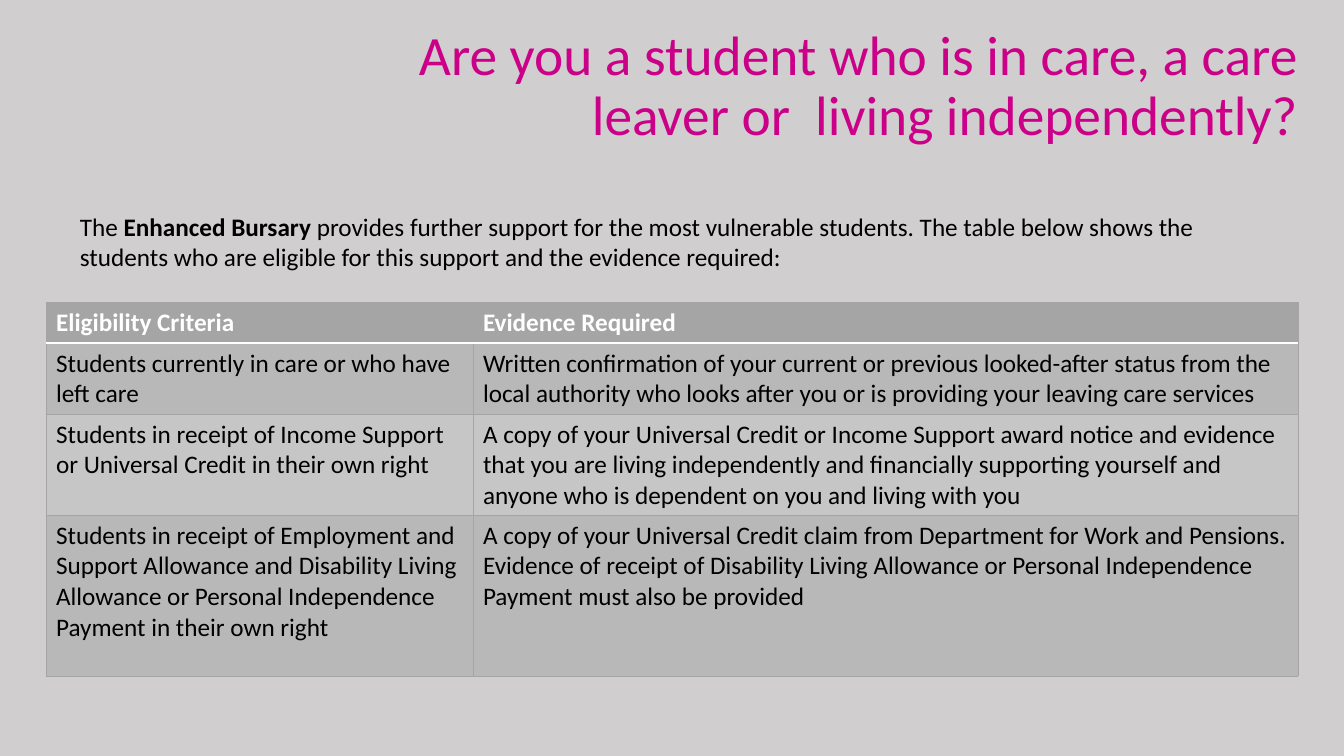
from lxml import etree
from pptx import Presentation, util as u
from pptx.dml.color import RGBColor
from pptx.enum import text
from pptx.oxml.ns import qn

COLOURS = {
    "background": "D0CECE",
    "title": "CC0088",
    "body": "000000",
    "header_text": "FFFFFF",
    "header": "A5A5A5",
    "dark_band": "B8B8B8",
    "light_band": "C6C6C6",
}
FONT = "Calibri"
EMU_PER_PX = 914400 / 100.8


def px(length):
    return u.Emu(round(length * EMU_PER_PX))


class SlideBuilder:
    def __init__(self, deck):
        self.slide = deck.slides.add_slide(deck.slide_layouts[6])
        background = self.slide.background.fill
        background.solid()
        background.fore_color.rgb = self.colour("background")

    def colour(self, name):
        return RGBColor.from_string(COLOURS[name])

    def style(self, font, size, colour, bold=False):
        font.name = FONT
        font.size = u.Pt(size)
        font.bold = bold
        font.color.rgb = self.colour(colour)

    def textbox(self, box, runs, size, colour, align=text.PP_ALIGN.LEFT,
                anchor=text.MSO_ANCHOR.TOP, spacing=1.0):
        frame = self.slide.shapes.add_textbox(*map(px, box)).text_frame
        frame.word_wrap = True
        frame.vertical_anchor = anchor
        paragraph = frame.paragraphs[0]
        paragraph.alignment = align
        paragraph.line_spacing = spacing
        self.style(paragraph.font, size, colour, None)
        for words, bold in runs:
            run = paragraph.add_run()
            run.text = words
            self.style(run.font, size, colour, bold)

    def border(self, cell, side, colour, width):
        line = etree.SubElement(cell._tc.get_or_add_tcPr(), qn(f"a:ln{side}"),
                                w=str(u.Pt(width)))
        fill = etree.SubElement(line, qn("a:solidFill"))
        etree.SubElement(fill, qn("a:srgbClr"), val=COLOURS[colour])

    def cell(self, cell, words, fill, colour, bold, edges):
        for side in "LRTB":
            self.border(cell, side, *edges.get(side, ("header", 0.5)))
        cell.fill.solid()
        cell.fill.fore_color.rgb = self.colour(fill)
        cell.text = words
        self.style(cell.text_frame.paragraphs[0].font, 18, colour, bold)

    def table(self, left, top, widths, heights, rows):
        table = self.slide.shapes.add_table(
            len(rows), len(widths), px(left), px(top),
            px(sum(widths)), px(sum(heights))).table
        table.horz_banding = False
        for column, width in zip(table.columns, widths):
            column.width = px(width)
        for r, (row, height) in enumerate(zip(rows, heights)):
            table.rows[r].height = px(height)
            header = r == 0
            band = "dark_band" if r % 2 else "light_band"
            edges = {0: {"B": ("header_text", 1)},
                     1: {"T": ("header_text", 1)}}.get(r, {})
            for c, words in enumerate(row):
                self.cell(table.cell(r, c), words,
                          "header" if header else band,
                          "header_text" if header else "body", header, edges)


def main():
    deck = Presentation()
    deck.slide_width, deck.slide_height = px(1344), px(756)
    bursary = SlideBuilder(deck)
    bursary.textbox(
        (363, 21, 945, 133),
        [("Are you a student who is in care, a care leaver or  living independently?", False)],
        39.6, "title", text.PP_ALIGN.RIGHT, text.MSO_ANCHOR.MIDDLE, 0.9)
    bursary.textbox(
        (70, 206, 1145, 132),
        [("The ", False),
         ("Enhanced Bursary ", True),
         ("provides further support for the most vulnerable students. The table below "
          "shows the students who are eligible for this support and the evidence required:",
          False)],
        18, "body")
    eligibility = [
        ("Eligibility Criteria", "Evidence Required"),
        ("Students currently in care or who have left care",
         "Written confirmation of your current or previous looked-after status from the "
         "local authority who looks after you or is providing your leaving care services"),
        ("Students in receipt of Income Support or Universal Credit in their own right",
         "A copy of your Universal Credit or Income Support award notice and evidence "
         "that you are living independently and financially supporting yourself and "
         "anyone who is dependent on you and living with you"),
        ("Students in receipt of Employment and Support Allowance and Disability Living "
         "Allowance or Personal Independence Payment in their own right",
         "A copy of your Universal Credit claim from Department for Work and Pensions. "
         "Evidence of receipt of Disability Living Allowance or Personal Independence "
         "Payment must also be provided"),
    ]
    bursary.table(46, 302, (427, 825), (41, 71, 101, 161), eligibility)
    deck.save("out.pptx")


if __name__ == "__main__":
    main()
